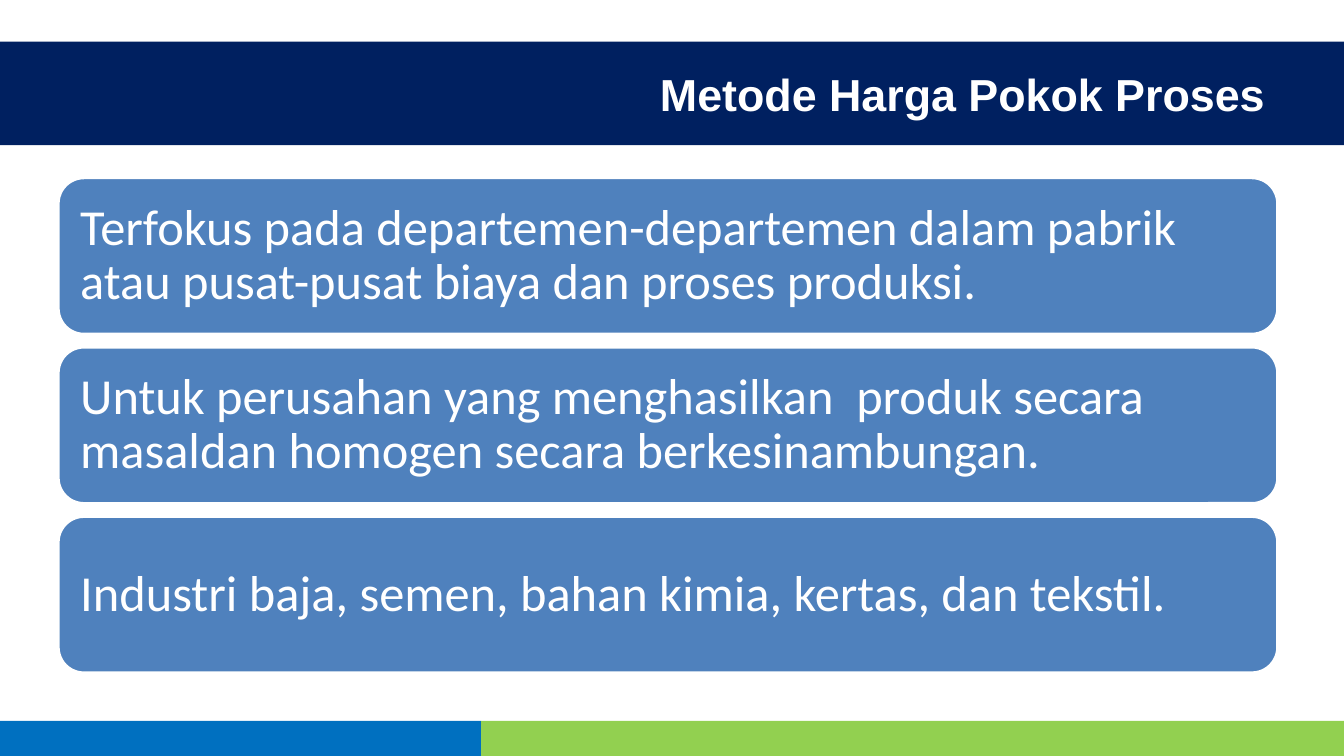
"""Build a slide on the process costing method."""
import pptx
import pptx.util
import pptx.dml.color
import pptx.enum.shapes
import pptx.enum.text

TITLE = "Metode Harga Pokok Proses"
POINTS = [
    "Terfokus pada departemen-departemen dalam pabrik atau pusat-pusat biaya dan proses produksi.",
    "Untuk perusahan yang menghasilkan  produk secara masaldan homogen secara berkesinambungan.",
    "Industri baja, semen, bahan kimia, kertas, dan tekstil.",
]
COLORS = {"navy": "002060", "blue": "0070C0", "green": "92D050",
          "card": "4F81BD", "white": "FFFFFF"}
WIDE = 10
HIGH = WIDE * 9 / 16
BAND_TOP, BAND_HIGH = 0.31, 0.77
FOOT_HIGH, SPLIT = 0.26, 3.58
LEFT, TOP, CARD_WIDE, CARD_HIGH, PITCH = 0.43, 1.32, 9.08, 1.17, 1.26

Inches, Pt = pptx.util.Inches, pptx.util.Pt
Kind = pptx.enum.shapes.MSO_SHAPE
Align = pptx.enum.text.PP_ALIGN

deck = pptx.Presentation()
deck.slide_width, deck.slide_height = Inches(WIDE), Inches(HIGH)
slide = deck.slides.add_slide(deck.slide_layouts[6])


def color(name):
    return pptx.dml.color.RGBColor.from_string(COLORS[name])


def block(left, top, width, height, fill, kind=Kind.RECTANGLE, line=None):
    shape = slide.shapes.add_shape(kind, *map(Inches, (left, top, width, height)))
    shape.shadow.inherit = False
    shape.fill.solid()
    shape.fill.fore_color.rgb = color(fill)
    if line:
        shape.line.color.rgb = color(line)
        shape.line.width = Pt(2)
    else:
        shape.line.fill.background()
    return shape


def write(shape, text, font="Calibri", size=27, bold=False, align=Align.LEFT,
          inset=0.1, space=0.9):
    frame = shape.text_frame
    frame.word_wrap = True
    frame.vertical_anchor = pptx.enum.text.MSO_ANCHOR.MIDDLE
    frame.margin_left = frame.margin_right = Inches(inset)
    frame.margin_top = frame.margin_bottom = Inches(0.05)
    para = frame.paragraphs[0]
    para.alignment, para.line_spacing = align, space
    run = para.add_run()
    run.text = text
    run.font.name, run.font.size, run.font.bold = font, Pt(size), bold
    run.font.color.rgb = color("white")


block(0, HIGH - FOOT_HIGH, SPLIT, FOOT_HIGH, "blue")
block(SPLIT, HIGH - FOOT_HIGH, WIDE - SPLIT, FOOT_HIGH, "green")
block(0, BAND_TOP, WIDE, BAND_HIGH, "navy")
title = slide.shapes.add_textbox(*map(Inches, (1.66, BAND_TOP, 7.85, BAND_HIGH)))
write(title, TITLE, font="Arial", size=24, bold=True, align=Align.RIGHT, space=1.0)

for row, point in enumerate(POINTS):
    card = block(LEFT, TOP + row * PITCH, CARD_WIDE, CARD_HIGH, "card",
                 kind=Kind.ROUNDED_RECTANGLE, line="white")
    write(card, point, inset=0.11)

deck.save("out.pptx")
